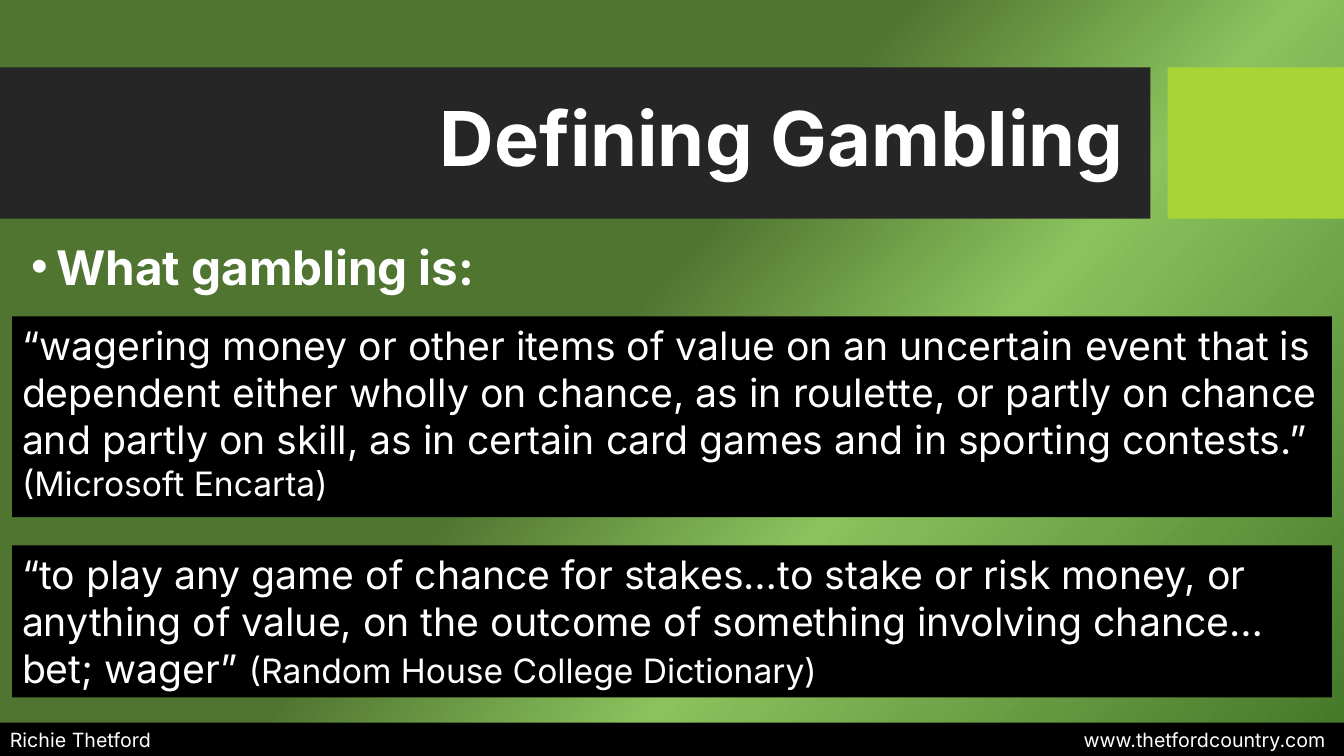
"""Build the Defining Gambling slide."""
from dataclasses import dataclass

from lxml import etree
from pptx import Presentation
from pptx.dml.color import RGBColor
from pptx.enum.shapes import MSO_SHAPE
from pptx.enum.text import MSO_ANCHOR, PP_ALIGN
from pptx.oxml.ns import qn
from pptx.slide import Slide
from pptx.util import Emu, Inches, Pt

RECT = MSO_SHAPE.RECTANGLE
TOP, MIDDLE = MSO_ANCHOR.TOP, MSO_ANCHOR.MIDDLE
LEFT, RIGHT = PP_ALIGN.LEFT, PP_ALIGN.RIGHT
WIDE, HIGH = Inches(13.33), Inches(7.5)
FONT = "Inter"
HUES = {"ink": "FFFFFF", "black": "000000", "band": "262626", "lime": "A7D535"}
STOPS = ((45, "507531"), (64, "8BC25D"), (100, "437528"))


@dataclass(frozen=True)
class Run:
    """Text of one size."""
    text: str
    size: int
    bold: bool = False


@dataclass(frozen=True)
class Box:
    """Panel placed in percent of the slide's width and height."""
    left: float
    top: float
    width: float
    height: float
    fill: str = ""
    runs: tuple[Run, ...] = ()
    align: PP_ALIGN = LEFT
    anchor: MSO_ANCHOR = TOP
    space: float = 1
    bullet: bool = False
    tab: float = 0


QUOTE = {"left": 0.9, "width": 98.2, "fill": "black"}
BOXES = (
    Box(0, 8.93, 85.6, 20, "band"),
    Box(86.87, 8.93, 13.13, 20, "lime"),
    Box(1.58, 30.8, 86.27, 11.07, bullet=True,
        runs=(Run("What gambling is:", 34, True),)),
    Box(0, 95.6, 100, 4.4, "black", tab=97.9,
        runs=(Run("Richie Thetford\twww.thetfordcountry.com", 14),)),
    Box(5.55, 10.93, 78.84, 15.73, align=RIGHT, anchor=MIDDLE, space=0.9,
        runs=(Run("Defining Gambling", 54, True),)),
    Box(top=41.87, height=26.53, **QUOTE, runs=(
        Run("“wagering money or other items of value on an uncertain event "
            "that is dependent either wholly on chance, as in roulette, or "
            "partly on chance and partly on skill, as in certain card games "
            "and in sporting contests.” ", 28),
        Run("(Microsoft Encarta)", 24))),
    Box(top=72.13, height=20.13, **QUOTE, runs=(
        Run("“to play any game of chance for stakes…to stake or risk money, "
            "or anything of value, on the outcome of something involving "
            "chance…bet; wager” ", 28),
        Run("(Random House College Dictionary)", 24))),
)


def share(part: float, whole: int) -> Emu:
    """Turn a percentage of a length into a length."""
    return Emu(round(part * whole / 100))


def paint(slide: Slide) -> None:
    """Fill the background with the diagonal green gradient."""
    fill = slide.background.fill
    fill.gradient()
    fill.gradient_angle = 318
    stops = slide.element.find(f".//{qn('a:gsLst')}")
    for old in list(stops):
        stops.remove(old)
    for place, hue in STOPS:
        stop = etree.SubElement(stops, qn("a:gs"), pos=str(place * 1000))
        etree.SubElement(stop, qn("a:srgbClr"), val=hue)


def draw(slide: Slide, box: Box) -> None:
    """Draw one panel with its text."""
    area = (share(box.left, WIDE), share(box.top, HIGH),
            share(box.width, WIDE), share(box.height, HIGH))
    if box.fill:
        shape = slide.shapes.add_shape(RECT, *area)
        shape.shadow.inherit = False
        shape.fill.solid()
        shape.fill.fore_color.rgb = RGBColor.from_string(HUES[box.fill])
        shape.line.fill.background()
    else:
        shape = slide.shapes.add_textbox(*area)
    if box.runs:
        write(shape.text_frame, box)


def write(frame, box: Box) -> None:
    """Write the runs of a panel as one paragraph."""
    frame.word_wrap = True
    frame.vertical_anchor = box.anchor
    para = frame.paragraphs[0]
    para.alignment = box.align
    para.line_spacing = box.space
    props = para._p.get_or_add_pPr()
    if box.bullet:
        props.set("marL", str(Inches(0.25)))
        props.set("indent", str(-Inches(0.25)))
        etree.SubElement(props, qn("a:buFont"), typeface="Arial")
        etree.SubElement(props, qn("a:buChar"), char="•")
    if box.tab:
        tabs = etree.SubElement(props, qn("a:tabLst"))
        etree.SubElement(tabs, qn("a:tab"), algn="r",
                         pos=str(share(box.tab, WIDE)))
    for item in box.runs:
        run = para.add_run()
        run.text = item.text
        run.font.name = FONT
        run.font.size = Pt(item.size)
        run.font.bold = item.bold
        run.font.color.rgb = RGBColor.from_string(HUES["ink"])


def main() -> None:
    """Build and save the slide."""
    deck = Presentation()
    deck.slide_width, deck.slide_height = WIDE, HIGH
    slide = deck.slides.add_slide(deck.slide_layouts[6])
    paint(slide)
    for box in BOXES:
        draw(slide, box)
    deck.save("out.pptx")


if __name__ == "__main__":
    main()
